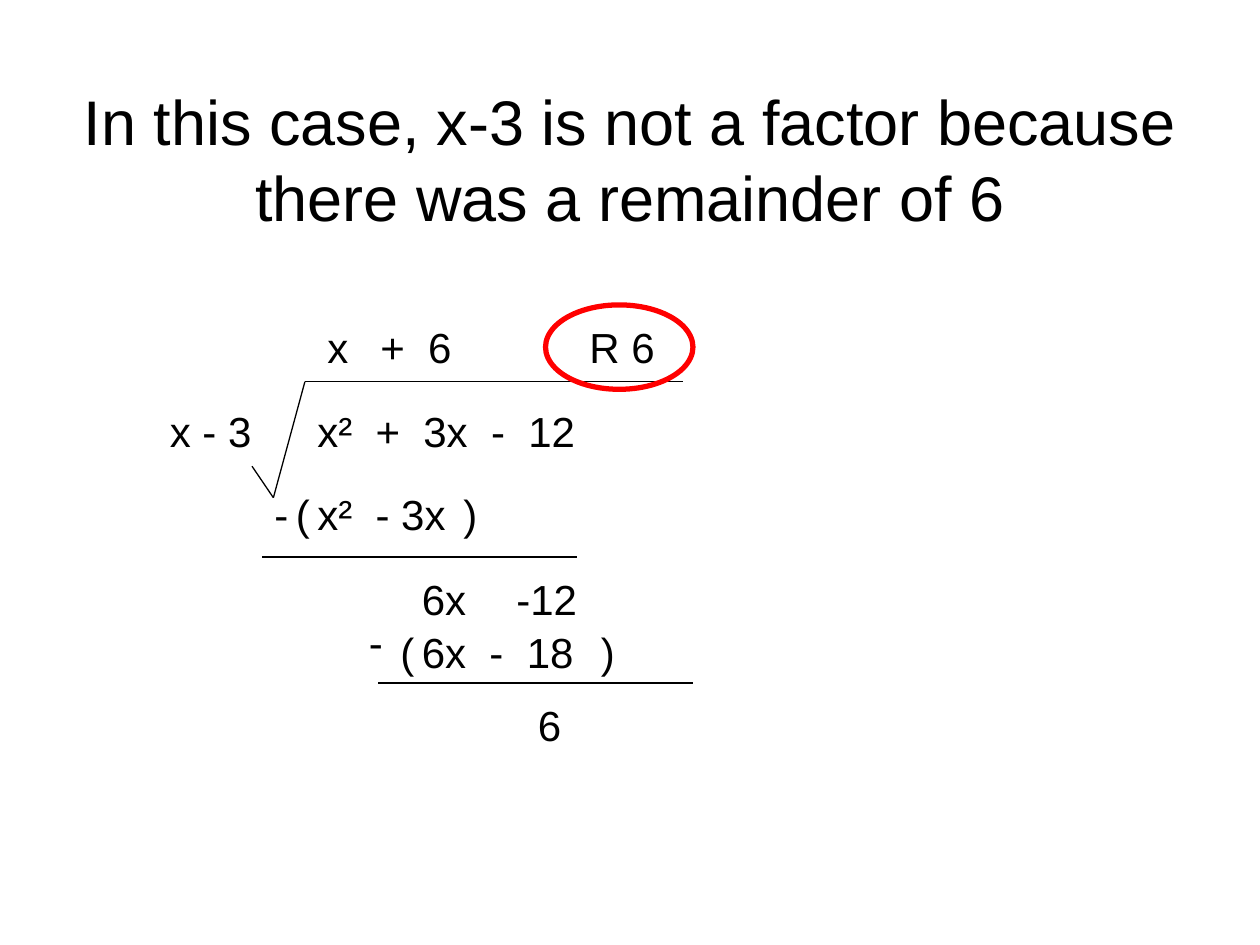
from lxml import etree
from pptx import Presentation
from pptx.dml.color import RGBColor
from pptx.enum.shapes import MSO_CONNECTOR, MSO_SHAPE
from pptx.enum.text import MSO_ANCHOR, PP_ALIGN
from pptx.oxml.ns import qn
from pptx.util import Inches, Pt

STRAIGHT = MSO_CONNECTOR.STRAIGHT
OVAL = MSO_SHAPE.OVAL
TOP = MSO_ANCHOR.TOP
CENTER = PP_ALIGN.CENTER
BLACK = RGBColor(0, 0, 0)
RED = RGBColor(255, 0, 0)
FONT = "Arial"

TITLE = "In this case, x-3 is not a factor because there was a remainder of 6"
ROWS = [
    (2.5, [("x", 2.5, 0.37), ("+  6", 2.92, 0.92), ("R 6", 4.58, 0.72)]),
    (3.17, [("x - 3", 1.25, 0.87), ("x²  +  3x  -  12", 2.42, 2.3)]),
    (3.83, [("-", 2.08, 0.31), ("(", 2.25, 0.31),
            ("x²  - 3x", 2.42, 1.25), (")", 3.58, 0.31)]),
    (4.5, [("6x", 3.25, 0.57), ("-12", 4, 0.7)]),
    (4.84, [("-", 2.83, 0.31)]),
    (4.92, [("(", 3.08, 0.31), ("6x  -  18", 3.25, 1.5), (")", 4.67, 0.31)]),
    (5.5, [("6", 4.17, 0.39)]),
]
DIVISION_SIGN = [(2, 3.7), (2.17, 3.95), (2.42, 3.03), (5.42, 3.03)]
SUBTRACTION_RULES = [((2.08, 4.42), (4.58, 4.42)), ((3, 5.42), (5.5, 5.42))]
REMAINDER_RING = (4.33, 2.42, 1.17, 0.67)


def add_text(slide, text, box, size, wrap=False):
    tf = slide.shapes.add_textbox(*map(Inches, box)).text_frame
    tf.word_wrap = wrap
    tf.text = text
    p = tf.paragraphs[0]
    font = p.runs[0].font
    font.name, font.size = FONT, Pt(size)
    font.color.rgb = BLACK
    return tf


def add_line(slide, start, end):
    line = slide.shapes.add_connector(STRAIGHT, *map(Inches, start + end))
    line.line.color.rgb = BLACK
    line.line.width = Pt(0.75)
    etree.SubElement(line._element.spPr, qn("a:effectLst"))


prs = Presentation()
prs.slide_width, prs.slide_height = Inches(10), Inches(7.5)
slide = prs.slides.add_slide(prs.slide_layouts[6])

tf = add_text(slide, TITLE, (0.5, 0.3, 9, 1.25), 36, wrap=True)
tf.vertical_anchor = TOP
tf.margin_top = Inches(0.35)
tf.margin_bottom = 0
tf.paragraphs[0].alignment = CENTER
tf.paragraphs[0].line_spacing = Pt(43.5)

for top, terms in ROWS:
    for text, left, width in terms:
        add_text(slide, text, (left, top, width, 0.5), 24)

for start, end in list(zip(DIVISION_SIGN, DIVISION_SIGN[1:])) + SUBTRACTION_RULES:
    add_line(slide, start, end)

ring = slide.shapes.add_shape(OVAL, *map(Inches, REMAINDER_RING))
ring.shadow.inherit = False
ring.fill.background()
ring.line.color.rgb = RED
ring.line.width = Pt(3)

prs.save("out.pptx")
